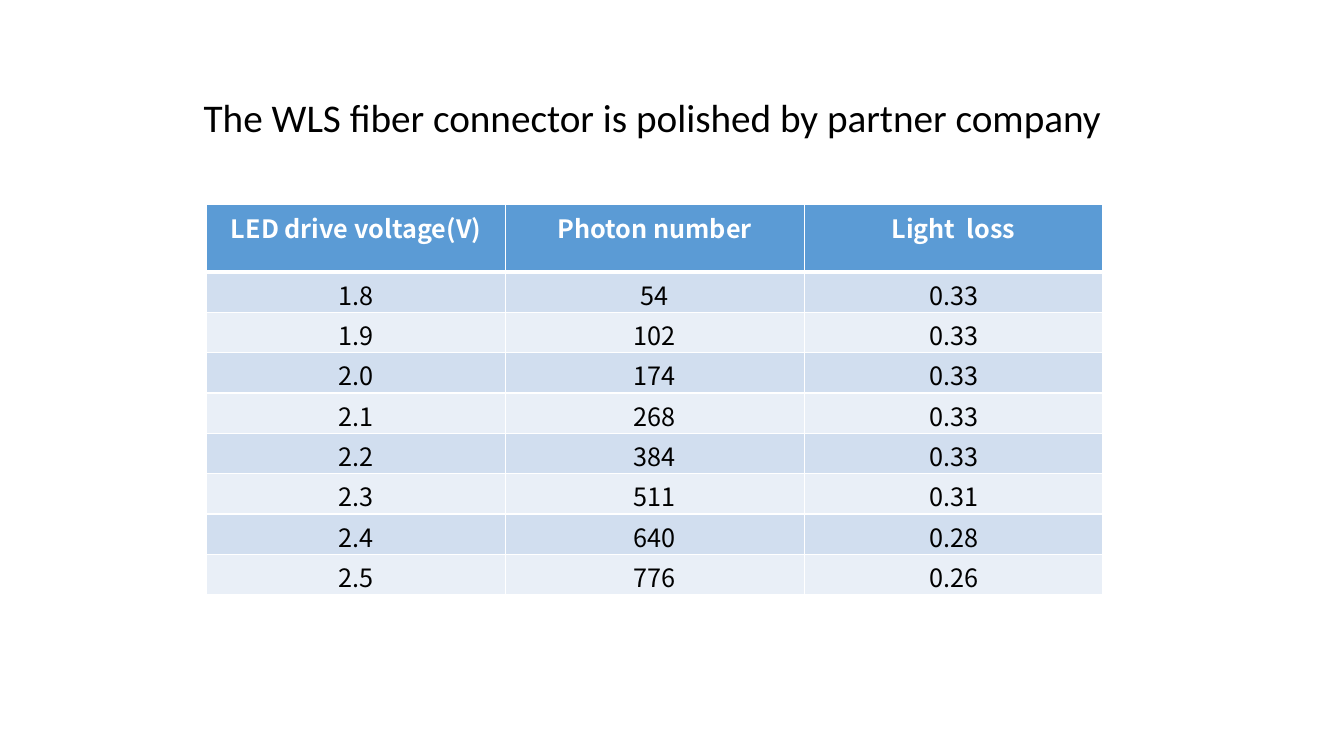
from lxml import etree
from pptx import Presentation
from pptx import util as u
from pptx.dml.color import RGBColor
from pptx.enum import text
from pptx.oxml import ns

COLORS = {
    "white": "FFFFFF",
    "black": "000000",
    "header": "5B9BD5",
    "odd_row": "D1DEEF",
    "even_row": "E9EFF7",
}
HEADINGS = ("LED drive voltage(V)", "Photon number", "Light  loss")
MEASUREMENTS = (
    ("1.8", "54", "0.33"),
    ("1.9", "102", "0.33"),
    ("2.0", "174", "0.33"),
    ("2.1", "268", "0.33"),
    ("2.2", "384", "0.33"),
    ("2.3", "511", "0.31"),
    ("2.4", "640", "0.28"),
    ("2.5", "776", "0.26"),
)
TABLE_WIDTH, HEADER_HEIGHT, ROW_HEIGHT = 8.89, 0.67, 0.4
THIN, THICK = 0.96, 3


def color(name):
    return RGBColor.from_string(COLORS[name])


def format_text(para, font, size, color_name, align, bold=False):
    para.alignment = align
    for span in para.runs:
        span.font.name = font
        span.font.size = u.Pt(size)
        span.font.bold = bold
        span.font.color.rgb = color(color_name)


def set_borders(cell, widths):
    """Draw white borders; widths are left, right, top, bottom in points."""
    properties = cell._tc.get_or_add_tcPr()
    for position, (side, width) in enumerate(zip("LRTB", widths)):
        line = etree.Element(ns.qn(f"a:ln{side}"), w=str(u.Pt(width)))
        fill = etree.SubElement(line, ns.qn("a:solidFill"))
        etree.SubElement(fill, ns.qn("a:srgbClr"), val=COLORS["white"])
        properties.insert(position, line)


def add_title(page, words):
    title = page.shapes.title
    title.left, title.top = u.Inches(1.92), u.Inches(0.88)
    title.width, title.height = u.Inches(9.94), u.Inches(1.03)
    frame = title.text_frame
    frame.text = words
    frame.word_wrap = True
    frame.auto_size = text.MSO_AUTO_SIZE.NONE
    frame.vertical_anchor = text.MSO_ANCHOR.TOP
    format_text(frame.paragraphs[0], "Calibri", 28, "black", text.PP_ALIGN.LEFT)


def fill_cell(cell, words, fill, is_header, borders):
    cell.text = words
    cell.fill.solid()
    cell.fill.fore_color.rgb = color(fill)
    if is_header:
        cell.vertical_anchor = text.MSO_ANCHOR.TOP
    else:
        cell.vertical_anchor = text.MSO_ANCHOR.BOTTOM
        cell.margin_top, cell.margin_bottom = u.Inches(0.01), 0
    format_text(cell.text_frame.paragraphs[0], "Noto Sans CJK SC", 18,
                "white" if is_header else "black", text.PP_ALIGN.CENTER, is_header)
    set_borders(cell, borders)


def add_data_table(page):
    records = (HEADINGS, *MEASUREMENTS)
    height = HEADER_HEIGHT + ROW_HEIGHT * len(MEASUREMENTS)
    table = page.shapes.add_table(
        len(records), len(HEADINGS), u.Inches(2.05), u.Inches(2.03),
        u.Inches(TABLE_WIDTH), u.Inches(height)).table
    for column in table.columns:
        column.width = u.Inches(TABLE_WIDTH / len(HEADINGS))

    for index, record in enumerate(records):
        is_header = index == 0
        table.rows[index].height = u.Inches(HEADER_HEIGHT if is_header else ROW_HEIGHT)
        fill = "header" if is_header else ("odd_row" if index % 2 else "even_row")
        # The thick rule lies between the header and the first data row
        borders = (THIN, THIN, THICK if index == 1 else THIN, THICK if is_header else THIN)
        for position, words in enumerate(record):
            fill_cell(table.cell(index, position), words, fill, is_header, borders)


def main():
    deck = Presentation()
    deck.slide_width, deck.slide_height = u.Inches(13.33), u.Inches(7.5)
    page = deck.slides.add_slide(deck.slide_layouts.get_by_name("Title Only"))

    # Title
    add_title(page, "The WLS fiber connector is polished by partner company")

    # Light loss measurements
    add_data_table(page)

    deck.save("out.pptx")


if __name__ == "__main__":
    main()
